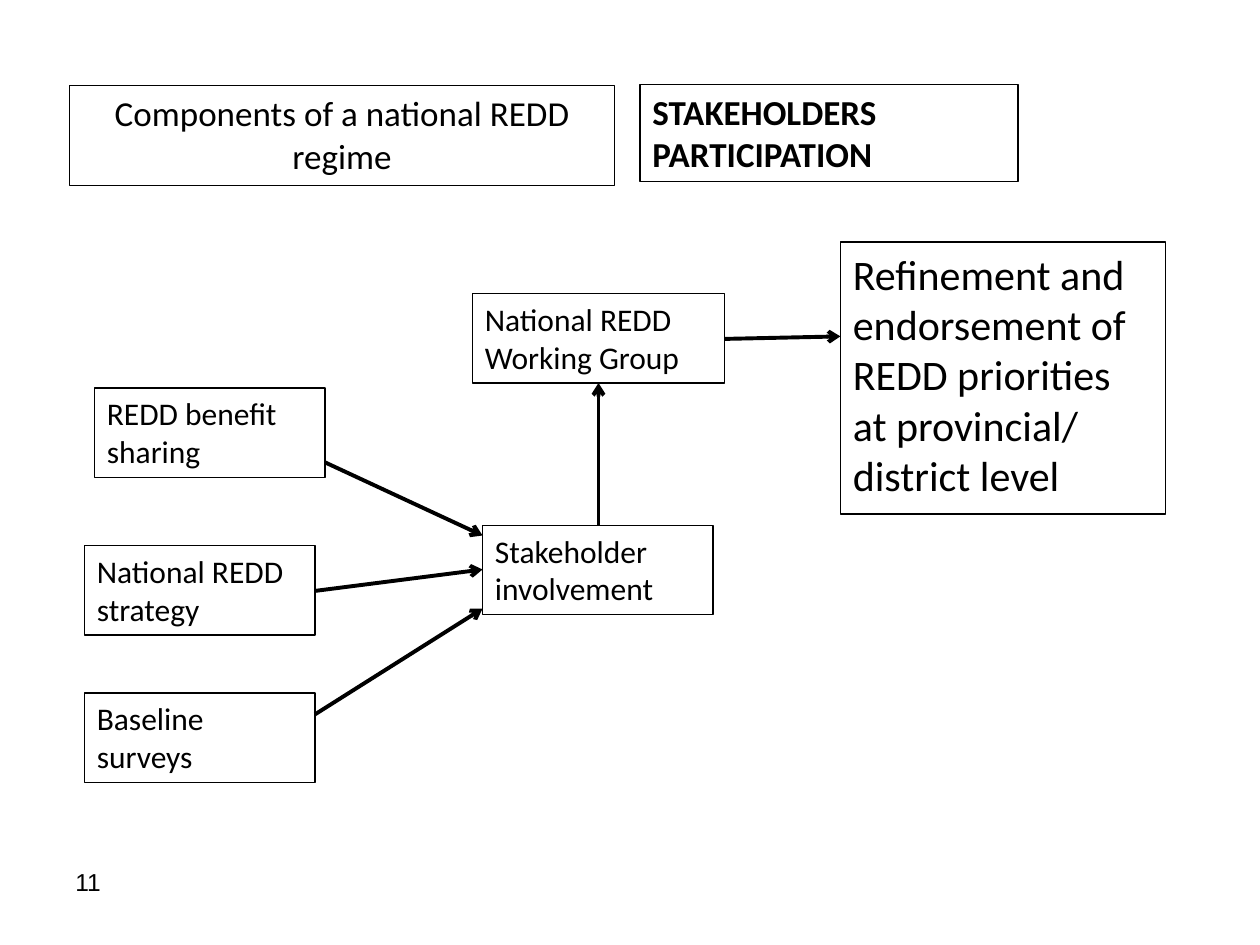
from dataclasses import dataclass

from pptx import Presentation
from pptx.dml.color import RGBColor
from pptx.enum.shapes import MSO_CONNECTOR
from pptx.enum.text import MSO_ANCHOR, MSO_AUTO_SIZE, PP_ALIGN
from pptx.oxml.ns import qn
from pptx.util import Inches, Pt
from lxml.etree import SubElement


@dataclass(frozen=True)
class Theme:
    ink: RGBColor = RGBColor(0, 0, 0)
    font: str = "Calibri"
    number_font: str = "Arial"
    heading: int = 20
    body: int = 18
    outcome: int = 24
    number: int = 14
    border: float = 0.75
    arrow: float = 2.25


THEME = Theme()

# text, (left, top, width, height), type size
BOXES = [
    ("National REDD Working Group", (3.75, 2.33, 2, 0.71), THEME.body),
    ("Refinement and endorsement of REDD priorities at provincial/ district level",
     (6.67, 1.92, 2.58, 2.16), THEME.outcome),
    ("REDD benefit sharing", (0.75, 3.08, 1.83, 0.71), THEME.body),
    ("Stakeholder involvement", (3.83, 4.17, 1.83, 0.71), THEME.body),
    ("National REDD strategy", (0.67, 4.33, 1.83, 0.71), THEME.body),
    ("Baseline surveys", (0.67, 5.5, 1.83, 0.71), THEME.body),
]

# start point, arrowhead point
ARROWS = [
    ((5.75, 2.69), (6.67, 2.67)),  # working group to refinement
    ((2.58, 3.67), (3.83, 4.25)),  # benefit sharing to stakeholders
    ((2.5, 4.69), (3.83, 4.52)),   # strategy to stakeholders
    ((2.5, 5.67), (3.83, 4.83)),   # surveys to stakeholders
    ((4.75, 4.17), (4.75, 3.04)),  # stakeholders to working group
]


def set_text(sp, text, size, font=THEME.font, bold=False, align=PP_ALIGN.LEFT):
    tf = sp.text_frame
    tf.text = text
    tf.word_wrap = True
    tf.auto_size = MSO_AUTO_SIZE.NONE
    tf.vertical_anchor = MSO_ANCHOR.TOP
    p = tf.paragraphs[0]
    p.alignment = align
    p.font.name = font
    p.font.size = Pt(size)
    p.font.bold = bold
    p.font.color.rgb = THEME.ink


def add_border(sp):
    sp.line.color.rgb = THEME.ink
    sp.line.width = Pt(THEME.border)


def place_title(s, text, at):
    title = s.shapes.title
    title.left, title.top, title.width, title.height = map(Inches, at)
    set_text(title, text, THEME.heading, align=PP_ALIGN.CENTER)
    add_border(title)


def add_text(s, text, at, size, **style):
    sp = s.shapes.add_textbox(*map(Inches, at))
    set_text(sp, text, size, **style)
    return sp


def add_box(s, text, at, size, **style):
    add_border(add_text(s, text, at, size, **style))


def add_arrow(s, start, end):
    sp = s.shapes.add_connector(MSO_CONNECTOR.STRAIGHT, *map(Inches, start + end))
    sp.line.color.rgb = THEME.ink
    sp.line.width = Pt(THEME.arrow)
    SubElement(sp.line._get_or_add_ln(), qn("a:tailEnd"), type="arrow")
    SubElement(sp._element.spPr, qn("a:effectLst"))


def main():
    prs = Presentation()
    prs.slide_width, prs.slide_height = Inches(10), Inches(7.5)
    s = prs.slides.add_slide(prs.slide_layouts[5])

    place_title(s, "Components of a national REDD regime", (0.55, 0.68, 4.33, 0.79))
    add_box(s, "STAKEHOLDERS PARTICIPATION", (5.08, 0.67, 3, 0.77),
            THEME.heading, bold=True)
    for text, at, size in BOXES:
        add_box(s, text, at, size)
    for start, end in ARROWS:
        add_arrow(s, start, end)
    add_text(s, "11", (0.5, 6.83, 2.33, 0.52), THEME.number, font=THEME.number_font)

    prs.save("out.pptx")


if __name__ == "__main__":
    main()
